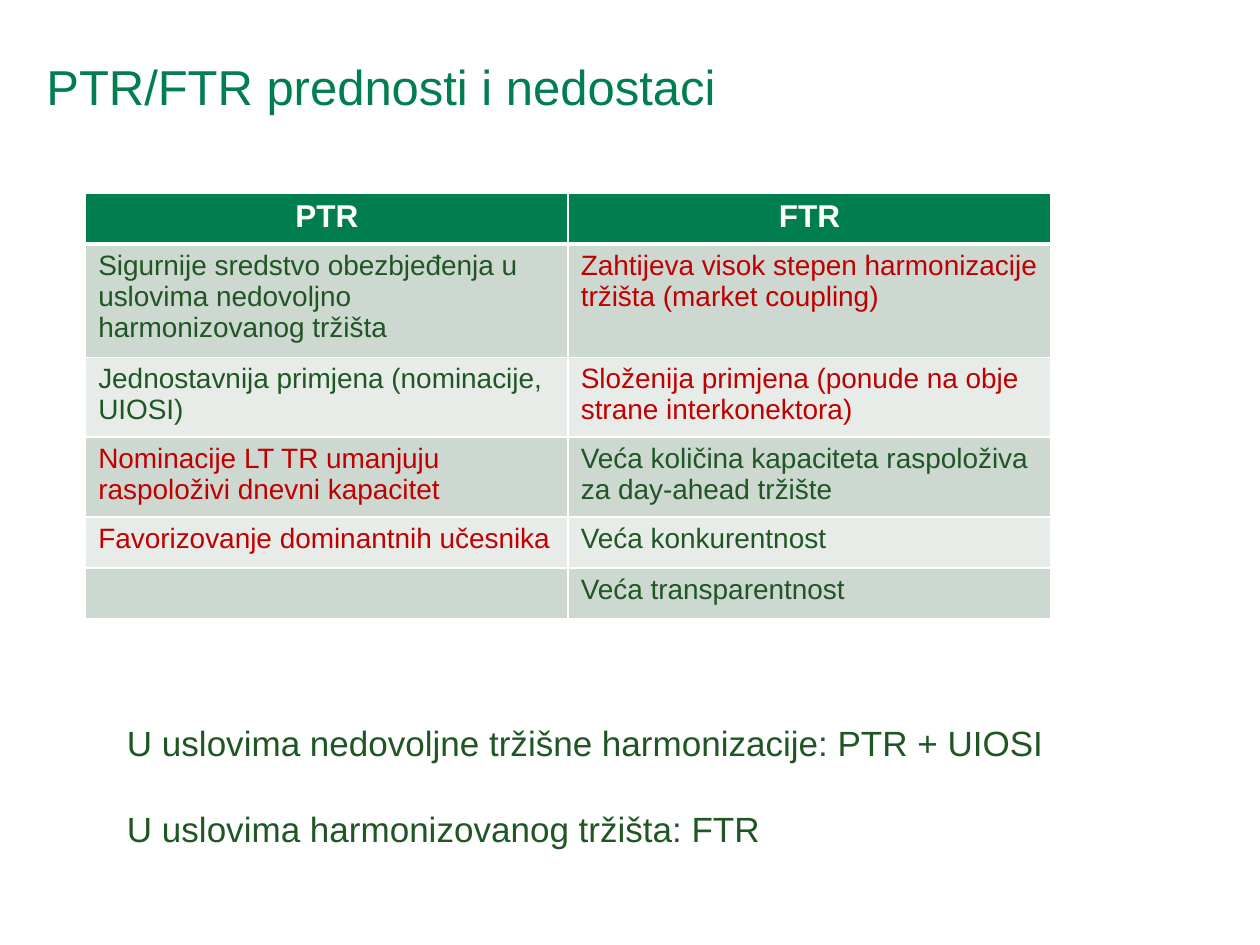
from lxml.etree import SubElement
from pptx import Presentation
from pptx.dml.color import RGBColor
from pptx.enum.text import MSO_ANCHOR, PP_ALIGN
from pptx.oxml.ns import qn
from pptx.util import Pt

GREEN, DARK, RED, WHITE = "007E4F", "205624", "C00000", "FFFFFF"
BANDS = ("CCD8D0", "E7ECE9")
ROW_HEIGHT, COLUMN_WIDTH = 29.2, 275.76

HEADINGS = ("PTR", "FTR")
COMPARISON = [
    (("Sigurnije sredstvo obezbjeđenja u uslovima nedovoljno harmonizovanog tržišta", DARK),
     ("Zahtijeva visok stepen harmonizacije tržišta (market coupling)", RED)),
    (("Jednostavnija primjena (nominacije, UIOSI)", DARK),
     ("Složenija primjena (ponude na obje strane interkonektora)", RED)),
    (("Nominacije LT TR umanjuju raspoloživi dnevni kapacitet", RED),
     ("Veća količina kapaciteta raspoloživa za day-ahead tržište", DARK)),
    (("Favorizovanje dominantnih učesnika", RED), ("Veća konkurentnost", DARK)),
    (("", DARK), ("Veća transparentnost", DARK)),
]
CONCLUSIONS = (
    "U uslovima nedovoljne tržišne harmonizacije: PTR + UIOSI",
    "U uslovima harmonizovanog tržišta: FTR",
)


def color(value):
    return RGBColor.from_string(value)


def write(paragraph, text, size, font_color, bold=False, **formats):
    paragraph.text = text
    for name, value in formats.items():
        setattr(paragraph, name, value)
    font_formats = {"name": "Arial", "size": Pt(size), "bold": bold}
    for name, value in font_formats.items():
        setattr(paragraph.font, name, value)
    paragraph.font.color.rgb = color(font_color)


def add_text(slide, box, lines, size, font_color, wrap=True,
             anchor=MSO_ANCHOR.TOP, gap=0, **formats):
    frame = slide.shapes.add_textbox(*map(Pt, box)).text_frame
    frame.word_wrap = wrap
    frame.vertical_anchor = anchor
    for index, line in enumerate(lines):
        paragraph = frame.add_paragraph() if index else frame.paragraphs[0]
        write(paragraph, line, size, font_color, **formats)
        if index:
            paragraph.space_before = Pt(gap)


def set_borders(cell, top=1, bottom=1):
    properties = cell._tc.get_or_add_tcPr()
    for side, width in (("L", 1), ("R", 1), ("T", top), ("B", bottom)):
        line = SubElement(properties, qn(f"a:ln{side}"), w=str(Pt(width)))
        fill = SubElement(line, qn("a:solidFill"))
        SubElement(fill, qn("a:srgbClr"), val=WHITE)


def format_cell(cell, fill_color, text, size, font_color, borders, **formats):
    # Borders come before the fill in the cell properties
    set_borders(cell, **borders)
    cell.fill.solid()
    cell.fill.fore_color.rgb = color(fill_color)
    write(cell.text_frame.paragraphs[0], text, size, font_color, **formats)


def add_comparison(slide, left, top):
    rows, columns = len(COMPARISON) + 1, len(HEADINGS)
    table = slide.shapes.add_table(
        rows, columns, Pt(left), Pt(top),
        Pt(columns * COLUMN_WIDTH), Pt(rows * ROW_HEIGHT)).table

    # Header row with a thick lower rule
    for column, heading in enumerate(HEADINGS):
        format_cell(table.cell(0, column), GREEN, heading, 18, WHITE,
                    {"bottom": 3}, bold=True, alignment=PP_ALIGN.CENTER)

    # Banded body rows
    for row, entries in enumerate(COMPARISON, start=1):
        borders = {"top": 3 if row == 1 else 1}
        for column, (text, font_color) in enumerate(entries):
            format_cell(table.cell(row, column), BANDS[(row - 1) % 2],
                        text, 16, font_color, borders)


def main():
    presentation = Presentation()
    presentation.slide_width, presentation.slide_height = Pt(720), Pt(540)
    slide = presentation.slides.add_slide(presentation.slide_layouts[6])

    # Title
    add_text(slide, (19.44, 24.48, 620.64, 53.28), ["PTR/FTR prednosti i nedostaci"],
             28, GREEN, anchor=MSO_ANCHOR.MIDDLE, line_spacing=0.9)
    # Comparison table
    add_comparison(slide, 48.96, 110.16)
    # Conclusions
    add_text(slide, (65.52, 408.96, 542.88, 79.92), CONCLUSIONS, 20, DARK,
             wrap=False, gap=25)

    presentation.save("out.pptx")


if __name__ == "__main__":
    main()
